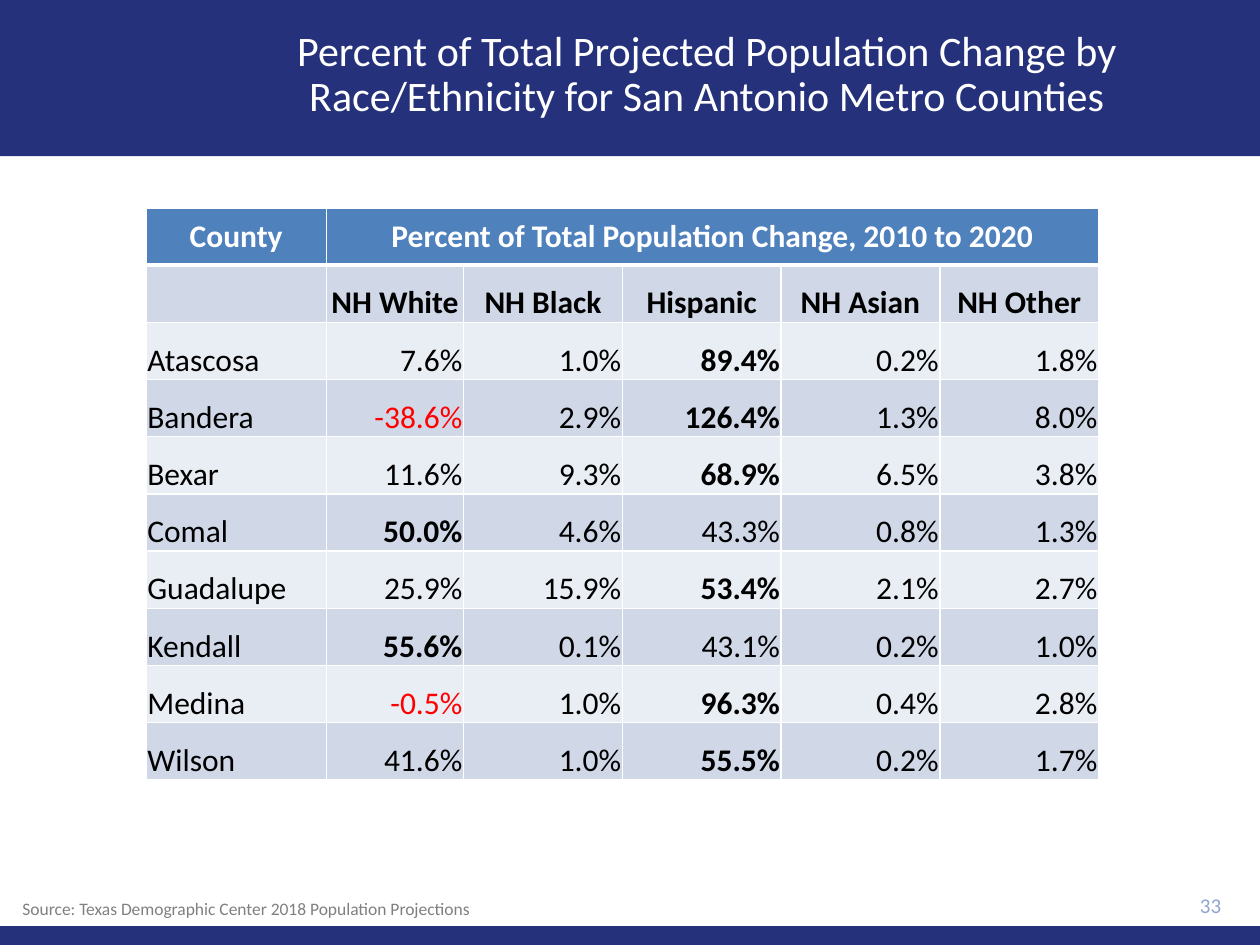
from dataclasses import dataclass

from lxml.etree import SubElement
from pptx import Presentation
from pptx.dml.color import RGBColor
from pptx.enum.shapes import MSO_SHAPE as Shape
from pptx.enum.text import MSO_ANCHOR as Anchor, PP_ALIGN as Align
from pptx.oxml.ns import qn
from pptx.util import Inches, Pt


@dataclass(frozen=True)
class Theme:
    font: str = "Calibri"
    navy: str = "25327B"
    header: str = "4F81BD"
    bands: tuple = ("D0D8E8", "E9EDF4")
    white: str = "FFFFFF"
    black: str = "000000"
    negative: str = "FF0000"
    source: str = "808080"
    number: str = "8FA5D1"
    title_size: int = 24
    table_size: int = 18
    number_size: int = 12
    source_size: int = 10


THEME = Theme()

GROUPS = ["NH White", "NH Black", "Hispanic", "NH Asian", "NH Other"]
COUNTY_SHARES = {
    "Atascosa": [7.6, 1.0, 89.4, 0.2, 1.8],
    "Bandera": [-38.6, 2.9, 126.4, 1.3, 8.0],
    "Bexar": [11.6, 9.3, 68.9, 6.5, 3.8],
    "Comal": [50.0, 4.6, 43.3, 0.8, 1.3],
    "Guadalupe": [25.9, 15.9, 53.4, 2.1, 2.7],
    "Kendall": [55.6, 0.1, 43.1, 0.2, 1.0],
    "Medina": [-0.5, 1.0, 96.3, 0.4, 2.8],
    "Wilson": [41.6, 1.0, 55.5, 0.2, 1.7],
}
COLUMN_WIDTHS = [1.43, 1.09] + [1.26] * 4


def write(text_frame, text, size, color, align=Align.LEFT, bold=False):
    text_frame.text = text
    paragraph = text_frame.paragraphs[0]
    paragraph.alignment = align
    for run in paragraph.runs:
        run.font.name = THEME.font
        run.font.size = Pt(size)
        run.font.bold = bold
        run.font.color.rgb = RGBColor.from_string(color)
    return paragraph


def add_text(slide, box, text, size, color, align, anchor):
    text_box = slide.shapes.add_textbox(*map(Inches, box))
    text_box.text_frame.word_wrap = True
    text_box.text_frame.vertical_anchor = anchor
    return write(text_box.text_frame, text, size, color, align)


def add_band(slide, box):
    band = slide.shapes.add_shape(Shape.RECTANGLE, *map(Inches, box))
    band.shadow.inherit = False
    band.fill.solid()
    band.fill.fore_color.rgb = RGBColor.from_string(THEME.navy)
    band.line.fill.background()


def add_title(slide, box):
    left, top, width, height = box
    add_band(slide, box)
    title = add_text(
        slide, (left + 1.32, top + 0.1, width - 1.42, height - 0.24),
        "Percent of Total Projected Population Change by "
        "Race/Ethnicity for San Antonio Metro Counties",
        THEME.title_size, THEME.white, Align.CENTER, Anchor.MIDDLE)
    title.line_spacing = 0.9


def add_footer(slide, box):
    left, top, width, height = box
    add_band(slide, (left, top + height - 0.15, width, 0.15))
    add_text(slide, (left + 8.9, top, 0.89, 0.34), "33",
             THEME.number_size, THEME.number, Align.RIGHT, Anchor.MIDDLE)
    add_text(slide, (left + 0.08, top + 0.07, 9.58, 0.27),
             "Source: Texas Demographic Center 2018 Population Projections",
             THEME.source_size, THEME.source, Align.LEFT, Anchor.TOP)


def style_cell(cell, fill, top=1, bottom=1):
    # Borders go before the fill in the cell properties
    properties = cell._tc.get_or_add_tcPr()
    for side, points in (("L", 1), ("R", 1), ("T", top), ("B", bottom)):
        line = SubElement(properties, qn(f"a:ln{side}"), w=str(Pt(points)))
        solid = SubElement(line, qn("a:solidFill"))
        SubElement(solid, qn("a:srgbClr"), val=THEME.white)
    cell.fill.solid()
    cell.fill.fore_color.rgb = RGBColor.from_string(fill)


def write_body_cell(cell, text, align, color=THEME.black, bold=False):
    cell.margin_left = cell.margin_right = cell.margin_top = Inches(0.01)
    cell.margin_bottom = 0
    cell.vertical_anchor = Anchor.BOTTOM
    write(cell.text_frame, text, THEME.table_size, color, align, bold)


def add_county_table(slide, box):
    row_count = len(COUNTY_SHARES) + 2
    frame = slide.shapes.add_table(row_count, len(COLUMN_WIDTHS), *map(Inches, box))
    table = frame.table
    for column, width in zip(table.columns, COLUMN_WIDTHS):
        column.width = Inches(width)
    for index, row in enumerate(table.rows):
        row.height = Inches(box[3] / row_count)
        for cell in row.cells:
            if index == 0:
                style_cell(cell, THEME.header, bottom=3)
            else:
                style_cell(cell, THEME.bands[(index - 1) % 2],
                           top=3 if index == 1 else 1)

    # Header row, its second cell spanning all groups
    table.cell(0, 1).merge(table.cell(0, len(GROUPS)))
    headings = ["County", "Percent of Total Population Change, 2010 to 2020"]
    for column, heading in enumerate(headings):
        cell = table.cell(0, column)
        cell.vertical_anchor = Anchor.MIDDLE
        write(cell.text_frame, heading, THEME.table_size, THEME.white,
              Align.CENTER, True)

    # Group names
    for column, group in enumerate(GROUPS, 1):
        write_body_cell(table.cell(1, column), group, Align.CENTER, bold=True)

    # Counties: largest share bold, negative shares red
    for row, (county, shares) in enumerate(COUNTY_SHARES.items(), 2):
        write_body_cell(table.cell(row, 0), county, Align.LEFT)
        for column, share in enumerate(shares, 1):
            color = THEME.negative if share < 0 else THEME.black
            write_body_cell(table.cell(row, column), f"{share:.1f}%", Align.RIGHT,
                            color, share == max(shares))


def main():
    presentation = Presentation()
    presentation.slide_width = Inches(10)
    presentation.slide_height = Inches(7.5)
    slide = presentation.slides.add_slide(presentation.slide_layouts[6])
    add_title(slide, (0, 0, 10, 1.24))
    add_county_table(slide, (1.16, 1.65, sum(COLUMN_WIDTHS), 4.54))
    add_footer(slide, (0, 7.01, 10, 0.49))
    presentation.save("out.pptx")


if __name__ == "__main__":
    main()
